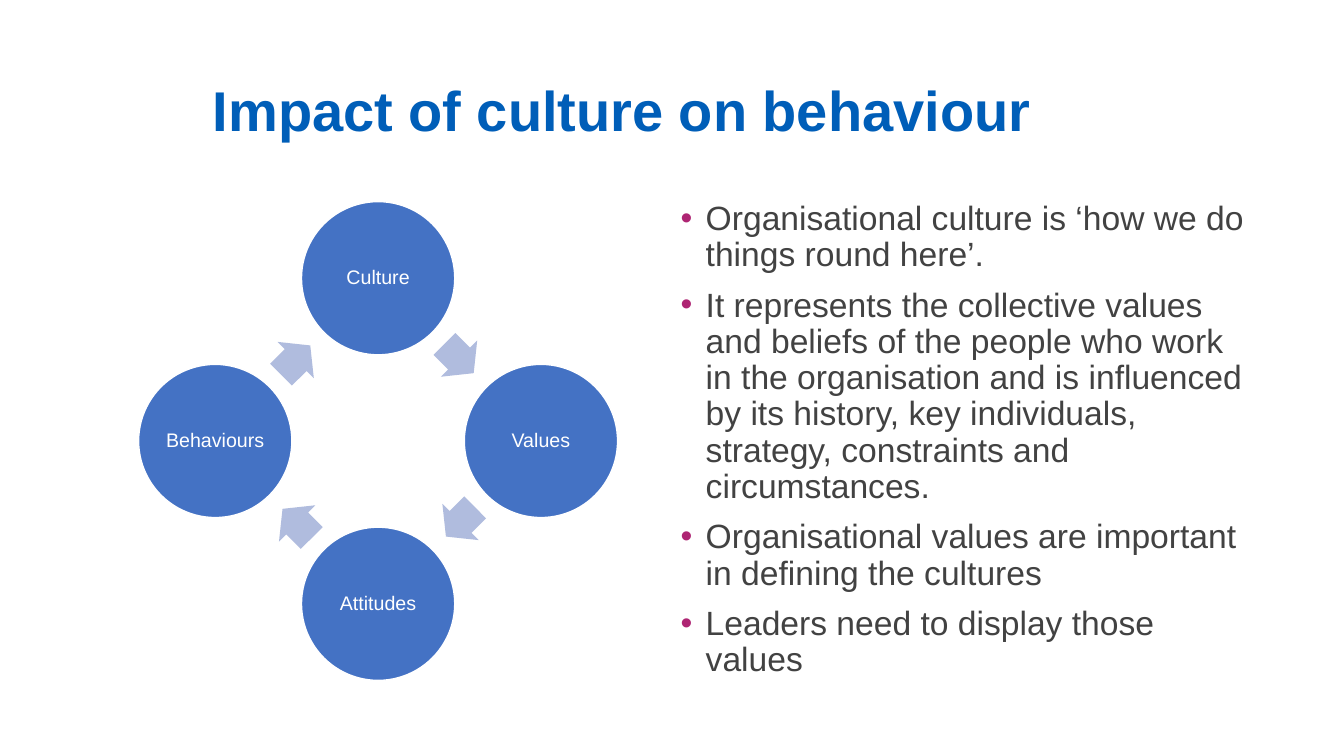
from math import cos, radians, sin

from lxml.etree import SubElement
from pptx import Presentation
from pptx.dml.color import RGBColor
from pptx.enum.shapes import MSO_SHAPE
from pptx.enum.text import MSO_ANCHOR, PP_ALIGN
from pptx.oxml.ns import qn
from pptx.util import Inches, Pt

TITLE = "Impact of culture on behaviour"
STAGES = ["Culture", "Values", "Attitudes", "Behaviours"]
POINTS = [
    "Organisational culture is ‘how we do things round here’.",
    "It represents the collective values and beliefs of the people who work in "
    "the organisation and is influenced by its history, key individuals, "
    "strategy, constraints and circumstances.",
    "Organisational values are important in defining the cultures",
    "Leaders need to display those values",
]

TITLE_BLUE = RGBColor(0x00, 0x5E, 0xB8)
STAGE_BLUE = RGBColor(0x44, 0x72, 0xC4)
ARROW_BLUE = RGBColor(0xB0, 0xBC, 0xDE)
BULLET_PINK = RGBColor(0xAE, 0x25, 0x73)
TEXT_GREY = RGBColor(0x42, 0x42, 0x42)
WHITE = RGBColor(0xFF, 0xFF, 0xFF)

CENTRE_X, CENTRE_Y = 3.75, 4.375
STAGE_RADIUS, ARROW_RADIUS = 1.615, 1.146
STAGE_SIZE = 1.52
ARROW_WIDTH, ARROW_HEIGHT = 0.41, 0.51
ARROW_LAG = 0.5


def add_bullet(paragraph):
    properties = paragraph._p.get_or_add_pPr()
    properties.set("marL", str(Inches(0.25)))
    properties.set("indent", str(-Inches(0.25)))
    colour = SubElement(properties, qn("a:buClr"))
    SubElement(colour, qn("a:srgbClr"), val=str(BULLET_PINK))
    SubElement(properties, qn("a:buFont"), typeface="Arial")
    SubElement(properties, qn("a:buChar"), char="•")


def write(frame, paragraphs, size, color, bold=False, align=PP_ALIGN.LEFT,
          anchor=MSO_ANCHOR.TOP, inset=0, gap=0, bullets=False):
    frame.word_wrap = True
    frame.vertical_anchor = anchor
    frame.margin_left = frame.margin_right = Inches(inset)
    frame.margin_top = frame.margin_bottom = Inches(inset)
    for index, text in enumerate(paragraphs):
        paragraph = frame.add_paragraph() if index else frame.paragraphs[0]
        paragraph.alignment = align
        paragraph.line_spacing = 0.9
        if index:
            paragraph.space_before = Pt(gap)
        if bullets:
            add_bullet(paragraph)
        run = paragraph.add_run()
        run.text = text
        run.font.name = "Arial"
        run.font.size = Pt(size)
        run.font.bold = bold
        run.font.color.rgb = color


def add_on_ring(slide, preset, angle, radius, width, height, fill):
    x = CENTRE_X + radius * cos(radians(angle))
    y = CENTRE_Y + radius * sin(radians(angle))
    part = slide.shapes.add_shape(preset, Inches(x - width / 2), Inches(y - height / 2),
                                  Inches(width), Inches(height))
    part.shadow.inherit = False
    part.fill.solid()
    part.fill.fore_color.rgb = fill
    part.line.fill.background()
    return part


def main():
    deck = Presentation()
    deck.slide_width, deck.slide_height = Inches(13.33), Inches(7.5)
    slide = deck.slides.add_slide(deck.slide_layouts[5])

    title = slide.shapes.title
    title.left, title.top = Inches(2.11), Inches(0.4)
    title.width, title.height = Inches(8.49), Inches(1.45)
    write(title.text_frame, [TITLE], size=40, color=TITLE_BLUE, bold=True,
          anchor=MSO_ANCHOR.MIDDLE)

    step = 360 / len(STAGES)
    for index, label in enumerate(STAGES):
        angle = index * step - 90
        stage = add_on_ring(slide, MSO_SHAPE.OVAL, angle, STAGE_RADIUS,
                            STAGE_SIZE, STAGE_SIZE, STAGE_BLUE)
        stage.line.color.rgb = WHITE
        stage.line.width = Pt(1)
        write(stage.text_frame, [label], size=14, color=WHITE,
              align=PP_ALIGN.CENTER, anchor=MSO_ANCHOR.MIDDLE, inset=0.02)

        arrow = add_on_ring(slide, MSO_SHAPE.RIGHT_ARROW, angle + step / 2 - ARROW_LAG,
                            ARROW_RADIUS, ARROW_WIDTH, ARROW_HEIGHT, ARROW_BLUE)
        arrow.adjustments[0] = 0.6
        arrow.adjustments[1] = 0.5
        arrow.rotation = (index + 0.5) * step

    points = slide.shapes.add_textbox(Inches(6.75), Inches(2), Inches(5.67), Inches(4.76))
    write(points.text_frame, POINTS, size=24, color=TEXT_GREY, gap=10, bullets=True)

    deck.save("out.pptx")


if __name__ == "__main__":
    main()
